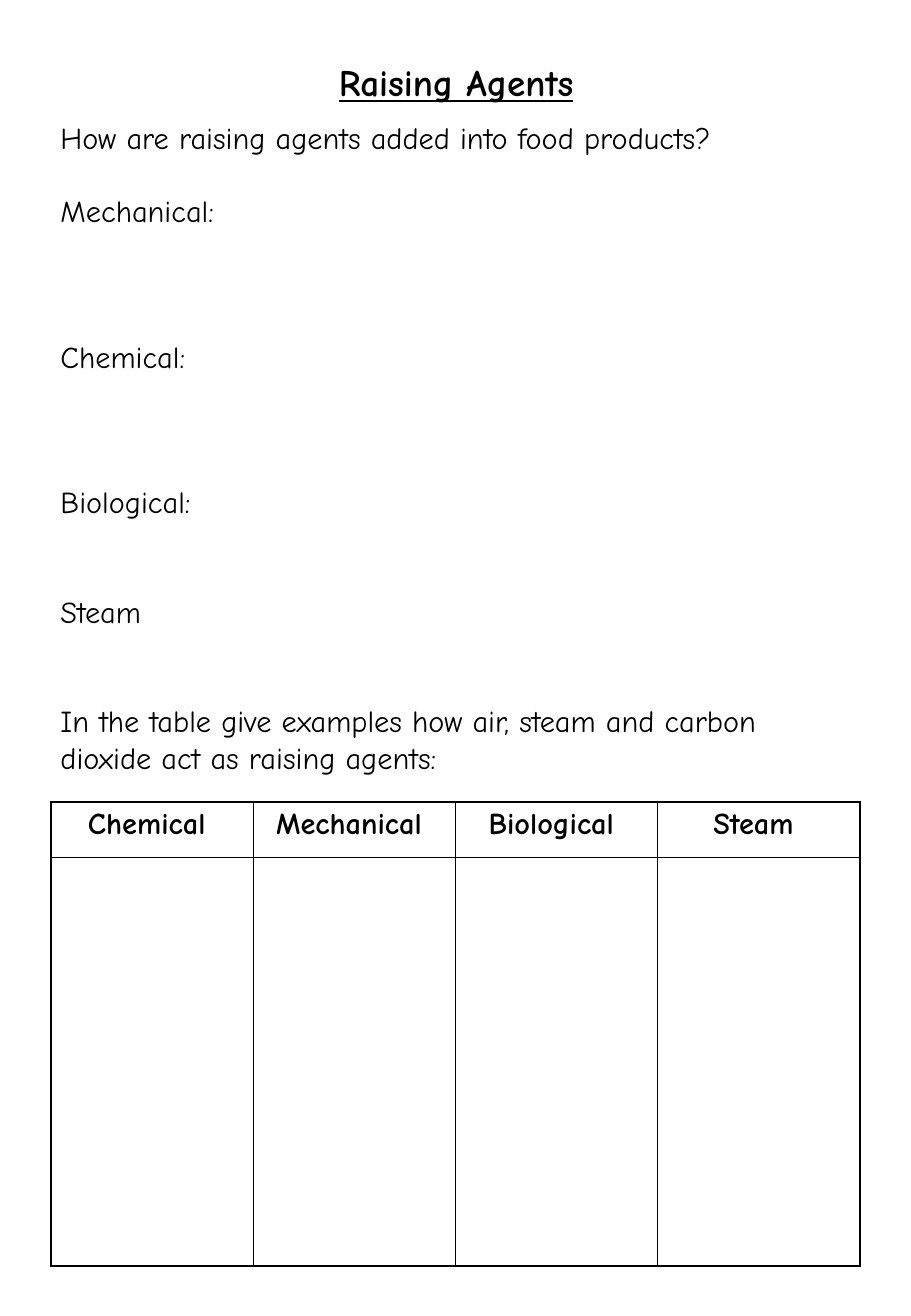
import dataclasses
import lxml.etree
import pptx
import pptx.dml.color
import pptx.enum.text
import pptx.oxml.ns
import pptx.util

Pt = pptx.util.Pt
Inches = pptx.util.Inches
Align = pptx.enum.text.PP_ALIGN
Anchor = pptx.enum.text.MSO_ANCHOR


@dataclasses.dataclass(frozen=True)
class Theme:
    font: str = "Comic Neue"
    ink: str = "000000"
    head: int = 22
    body: int = 18
    line: float = 21.6  # height of one body line
    rule: int = 1


THEME = Theme()
WIDE, HIGH = 7.5, 10.83

# Each prompt with the number of writing lines left above it
PROMPTS = [
    (0, "How are raising agents added into food products?"),
    (1, "Mechanical:"),
    (3, "Chemical:"),
    (3, "Biological:"),
    (2, "Steam"),
    (2, "In the table give examples how air, steam and carbon "
        "dioxide act as raising agents:"),
]
HEADS = ["Chemical ", "Mechanical ", "Biological ", "Steam "]


def add_run(para, text, size, bold=False, under=False):
    run = para.add_run()
    run.text = text
    font = run.font
    font.name, font.size = THEME.font, Pt(size)
    font.bold, font.underline = bold, under
    font.color.rgb = pptx.dml.color.RGBColor.from_string(THEME.ink)


def add_frame(slide, box):
    frame = slide.shapes.add_textbox(*map(Inches, box)).text_frame
    frame.word_wrap = True
    return frame


def add_title(slide, box):
    frame = add_frame(slide, box)
    frame.vertical_anchor = Anchor.MIDDLE
    para = frame.paragraphs[0]
    para.alignment = Align.CENTER
    add_run(para, "Raising Agents", THEME.head, bold=True, under=True)


def add_prompts(slide, box):
    frame = add_frame(slide, box)
    for index, (blank, text) in enumerate(PROMPTS):
        para = frame.add_paragraph() if index else frame.paragraphs[0]
        para.space_before = Pt(blank * THEME.line)
        add_run(para, text, THEME.body)


def style_cell(cell):
    # Borders come before the fill in the cell properties
    props = cell._tc.get_or_add_tcPr()
    name = pptx.oxml.ns.qn
    for side in "LRTB":
        edge = lxml.etree.SubElement(props, name("a:ln" + side),
                                     w=str(Pt(THEME.rule)))
        fill = lxml.etree.SubElement(edge, name("a:solidFill"))
        lxml.etree.SubElement(fill, name("a:srgbClr"), val=THEME.ink)
    cell.fill.background()
    cell.margin_left = cell.margin_right = Inches(0.04)
    cell.margin_top = cell.margin_bottom = Inches(0.04)


def add_grid(slide, box):
    left, top, wide, high = box
    table = slide.shapes.add_table(2, len(HEADS), *map(Inches, box)).table
    table.first_row = table.horz_banding = False
    for col in table.columns:
        col.width = Inches(wide / len(HEADS))
    for row, share in zip(table.rows, (0.12, 0.88)):
        row.height = Inches(high * share)
    for cell in table.iter_cells():
        style_cell(cell)
    for index, text in enumerate(HEADS):
        para = table.cell(0, index).text_frame.paragraphs[0]
        para.alignment = Align.CENTER
        add_run(para, text, THEME.body, bold=True)


def main():
    deck = pptx.Presentation()
    deck.slide_width, deck.slide_height = Inches(WIDE), Inches(HIGH)
    slide = deck.slides.add_slide(deck.slide_layouts[6])
    # Heading, writing prompts, then the table to fill in
    add_title(slide, (0.38, 0.43, WIDE * 0.9, 0.49))
    add_prompts(slide, (0.4, 0.93, 6.66, 5.86))
    add_grid(slide, (0.42, 6.6, 6.66, 3.82))
    deck.save("out.pptx")


if __name__ == "__main__":
    main()
